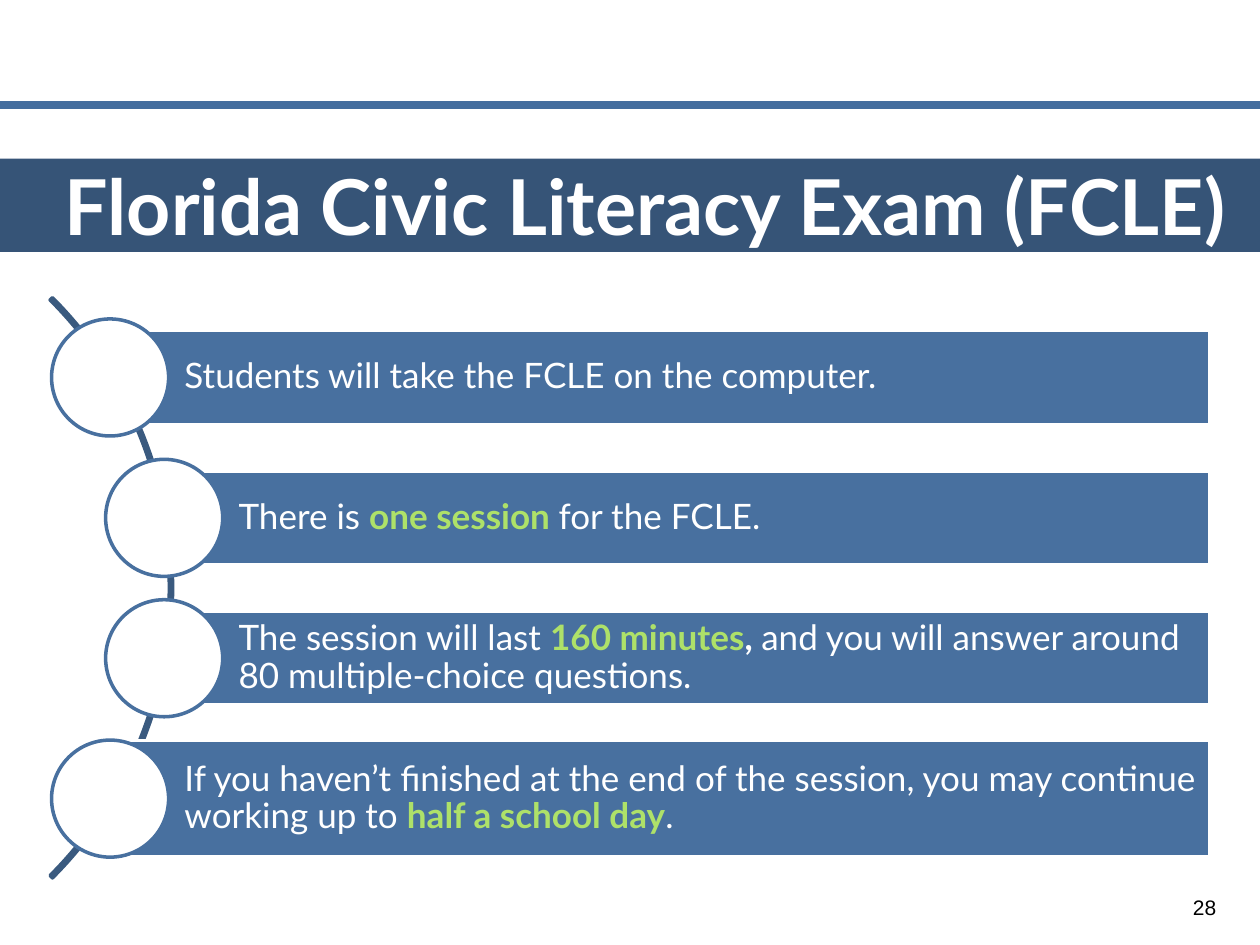
from dataclasses import dataclass

from lxml.etree import SubElement
from pptx import Presentation
from pptx.dml.color import RGBColor
from pptx.enum.shapes import MSO_CONNECTOR as Link, MSO_SHAPE as Kind
from pptx.enum.text import MSO_ANCHOR as Anchor, MSO_AUTO_SIZE as Fit, PP_ALIGN as Align
from pptx.oxml.ns import qn
from pptx.util import Cm, Pt

HUES = {"rule": "446D9E", "arc": "3A5A7F", "bar": "48709F", "band": "365477",
        "white": "FFFFFF", "green": "AEE169", "black": "000000"}
WIDE, HIGH = 25.4, 19.05
DISC = 2.36                 # disc diameter
TOP, STEP = 7.61, 2.83      # centre of the first row, distance between rows
OUTER, INNER = 2.22, 3.31   # disc centres along the arc
RIGHT = 24.38               # right edge of the bars


@dataclass
class Row:
    mid: float
    runs: list
    tall: float = 1.89


ROWS = [
    Row(OUTER, [("Students will take the FCLE on the computer.",)]),
    Row(INNER, [("There is ",), ("one session ", "green", True), ("for the FCLE.",)]),
    Row(INNER, [("The session will last ",), ("160 minutes", "green", True),
                (", ", "white", True),
                ("and you will answer around 80 multiple-choice questions.",)]),
    Row(OUTER, [("If you haven’t finished at the end of the session, "
                 "you may continue working up to ",),
                ("half a school day", "green", True), (".",)], 2.34),
]


def hue(name: str) -> RGBColor:
    return RGBColor.from_string(HUES[name])


def write(shape, runs: list, size: float = 20, font: str = "Lato", align=Align.LEFT,
          anchor=Anchor.MIDDLE, pad: tuple = (0, 0, 0, 0), lines: float = 1.0):
    """Fill a shape with runs of (text, colour, bold); pad is left, top, right, bottom."""
    frame = shape.text_frame
    frame.word_wrap, frame.auto_size = True, Fit.NONE
    frame.vertical_anchor = anchor
    (frame.margin_left, frame.margin_top,
     frame.margin_right, frame.margin_bottom) = map(Cm, pad)
    para = frame.paragraphs[0]
    para.alignment, para.line_spacing = align, lines
    for text, tint, bold in ((*run, "white", False)[:3] if len(run) == 1 else run
                             for run in runs):
        run = para.add_run()
        run.text = text
        run.font.name, run.font.size, run.font.bold = font, Pt(size), bold
        run.font.color.rgb = hue(tint)
    return para


def draw(slide, kind, x: float, y: float, w: float, h: float, line: str, fill: str = ""):
    shape = slide.shapes.add_shape(kind, Cm(x), Cm(y), Cm(w), Cm(h))
    shape.shadow.inherit = False
    if fill:
        shape.fill.solid()
        shape.fill.fore_color.rgb = hue(fill)
    else:
        shape.fill.background()
    shape.line.color.rgb, shape.line.width = hue(line), Pt(2)
    return shape


def add_rule(slide) -> None:
    rule = slide.shapes.add_connector(Link.STRAIGHT, 0, Cm(2.11), Cm(WIDE), Cm(2.11))
    rule.line.color.rgb, rule.line.width = hue("rule"), Pt(4.5)
    SubElement(rule._element.spPr, qn("a:effectLst"))


def add_title(slide) -> None:
    band = slide.shapes.title
    band.left, band.top, band.width, band.height = Cm(0), Cm(3.2), Cm(WIDE), Cm(1.88)
    band.fill.solid()
    band.fill.fore_color.rgb = hue("band")
    para = write(band, [("Florida Civic Literacy Exam (FCLE)", "white", True)], 44,
                 align=Align.CENTER, anchor=Anchor.TOP)
    para._p.get_or_add_pPr().set("marL", str(Cm(0.64)))


def add_arc(slide) -> None:
    arc = draw(slide, Kind.BLOCK_ARC, -13.06, 3.58, 16.54, 16.54, "arc")
    for i, value in enumerate((189, 27, 0.004)):
        arc.adjustments[i] = value


def add_row(slide, row: Row, y: float) -> None:
    """Draw a bar that starts at the centre of its disc."""
    bar = draw(slide, Kind.RECTANGLE, row.mid, y - row.tall / 2,
               RIGHT - row.mid, row.tall, "white", "bar")
    write(bar, row.runs, pad=(1.5, 0.15, 0.15, 0.15), lines=0.9)
    draw(slide, Kind.OVAL, row.mid - DISC / 2, y - DISC / 2, DISC, DISC, "bar", "white")


def main() -> None:
    deck = Presentation()
    deck.slide_width, deck.slide_height = Cm(WIDE), Cm(HIGH)
    slide = deck.slides.add_slide(deck.slide_layouts[5])
    add_rule(slide)
    add_title(slide)
    add_arc(slide)
    for i, row in enumerate(ROWS):
        add_row(slide, row, TOP + i * STEP)
    page = slide.shapes.add_textbox(Cm(23.7), Cm(17.78), Cm(1.17), Cm(1.02))
    write(page, [("28", "black", False)], 12, "Arial", Align.CENTER)
    deck.save("out.pptx")


if __name__ == "__main__":
    main()
